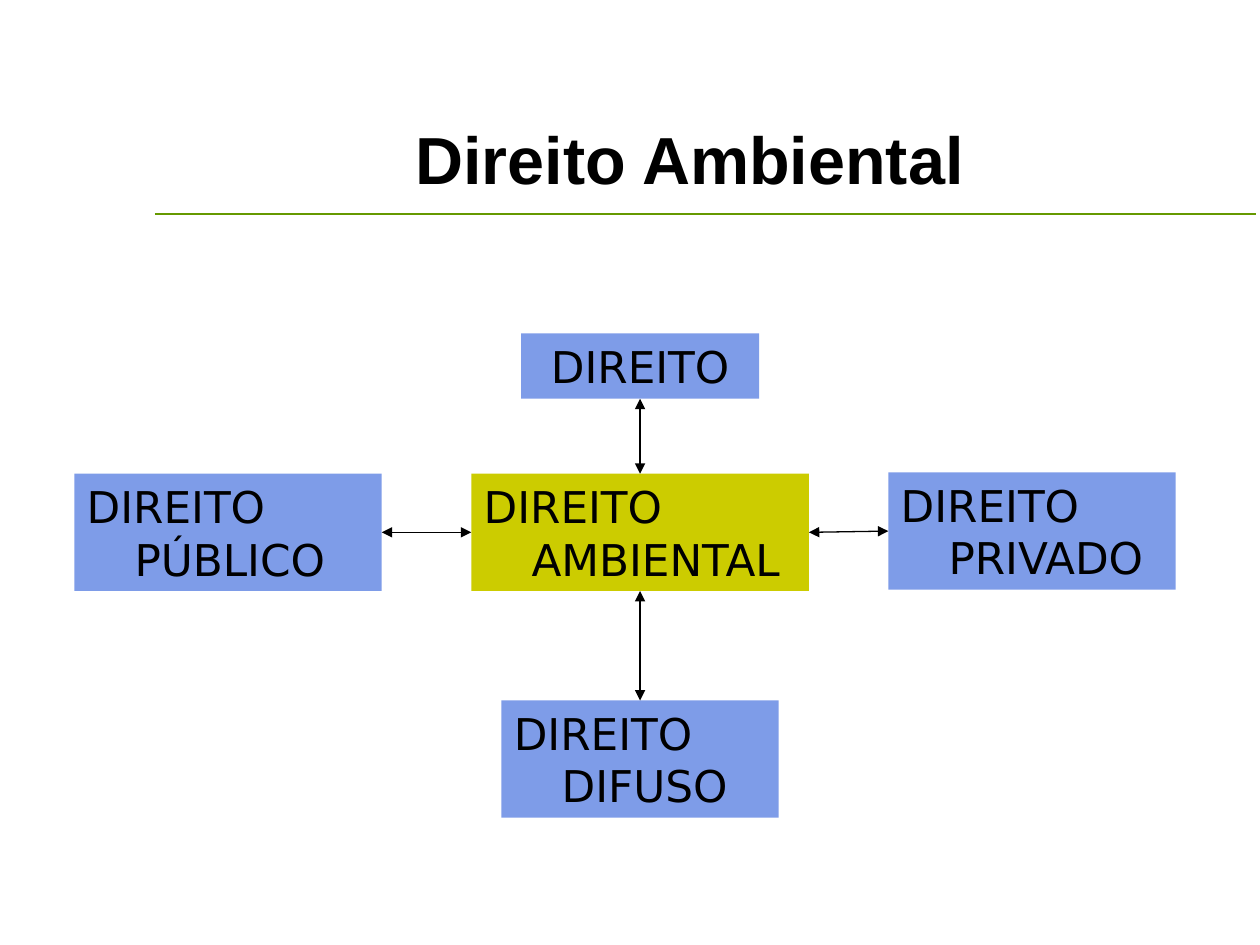
from pptx import Presentation
from pptx import util as u
from pptx.dml.color import RGBColor
from pptx.enum import shapes, text
from pptx.oxml.ns import qn
from lxml import etree

COLORS = {"ink": "000000", "rule": "669900", "branch": "7E9CE8", "core": "CCCC00"}
TOP, LEFT, BOTTOM, RIGHT = range(4)


class Diagram:
    """Draws styled elements on one slide, on a grid of 100 columns by 75 rows."""

    label_font, label_size = "DejaVu Sans", 25
    title_font, title_size = "Arial", 38

    def __init__(self, deck):
        self.slide = deck.slides.add_slide(deck.slide_layouts[5])
        self.column = deck.slide_width / 100
        self.row = deck.slide_height / 75

    def place(self, left, top, width, height):
        return (round(left * self.column), round(top * self.row),
                round(width * self.column), round(height * self.row))

    def color(self, name):
        return RGBColor.from_string(COLORS[name])

    def label(self, frame, words, font, size, align, bold=False):
        frame.text = words
        frame.word_wrap = True
        frame.auto_size = text.MSO_AUTO_SIZE.NONE
        para = frame.paragraphs[0]
        para.alignment = align
        span = para.runs[0].font
        span.name, span.size, span.bold = font, u.Pt(size), bold
        span.color.rgb = self.color("ink")
        return para

    def title(self, words, *area):
        box = self.slide.shapes.title
        box.left, box.top, box.width, box.height = self.place(*area)
        box.text_frame.vertical_anchor = text.MSO_ANCHOR.BOTTOM
        self.label(box.text_frame, words, self.title_font, self.title_size,
                   text.PP_ALIGN.CENTER, bold=True)

    def box(self, words, center_x, center_y, width, height=9.3, fill="branch",
            align=text.PP_ALIGN.JUSTIFY):
        area = self.place(center_x - width / 2, center_y - height / 2, width, height)
        box = self.slide.shapes.add_shape(shapes.MSO_SHAPE.RECTANGLE, *area)
        box.shadow.inherit = False
        box.fill.solid()
        box.fill.fore_color.rgb = self.color(fill)
        box.line.fill.background()
        box.text_frame.vertical_anchor = text.MSO_ANCHOR.TOP
        para = self.label(box.text_frame, words, self.label_font, self.label_size, align)
        indent = u.Inches(0.38)
        properties = para._p.get_or_add_pPr()
        properties.set("marL", str(indent))
        properties.set("indent", str(-indent))
        return box

    def line(self, start, end, color="ink", width=0.75):
        line = self.slide.shapes.add_connector(
            shapes.MSO_CONNECTOR.STRAIGHT, *self.place(*start, *end))
        line.line.color.rgb = self.color(color)
        line.line.width = u.Pt(width)
        etree.SubElement(line._element.spPr, qn("a:effectLst"))
        return line

    def arrow(self, first, first_side, second, second_side):
        arrow = self.line((0, 0), (1, 1))
        arrow.begin_connect(first, first_side)
        arrow.end_connect(second, second_side)
        for end in ("a:headEnd", "a:tailEnd"):
            etree.SubElement(arrow.line._get_or_add_ln(), qn(end), type="triangle")


def main():
    deck = Presentation()
    deck.slide_width, deck.slide_height = u.Inches(10), u.Inches(7.5)
    diagram = Diagram(deck)
    diagram.line((12.3, 17), (99.7, 17), color="rule", width=1)
    diagram.title("Direito Ambiental", 13, 1.3, 83.5, 14.9)

    middle_x, middle_y = 50.8, 42.25
    law = diagram.box("DIREITO", middle_x, 29.05, 18.9, 5.2, align=text.PP_ALIGN.CENTER)
    core = diagram.box("DIREITO AMBIENTAL", middle_x, middle_y, 26.8, fill="core")
    diffuse = diagram.box("DIREITO DIFUSO", middle_x, 60.25, 22)
    public = diagram.box("DIREITO PÚBLICO", 18.1, middle_y, 24.4)
    private = diagram.box("DIREITO PRIVADO", 81.9, middle_y - 0.1, 22.8)

    diagram.arrow(public, RIGHT, core, LEFT)
    diagram.arrow(law, BOTTOM, core, TOP)
    diagram.arrow(diffuse, TOP, core, BOTTOM)
    diagram.arrow(core, RIGHT, private, LEFT)
    deck.save("out.pptx")


if __name__ == "__main__":
    main()
